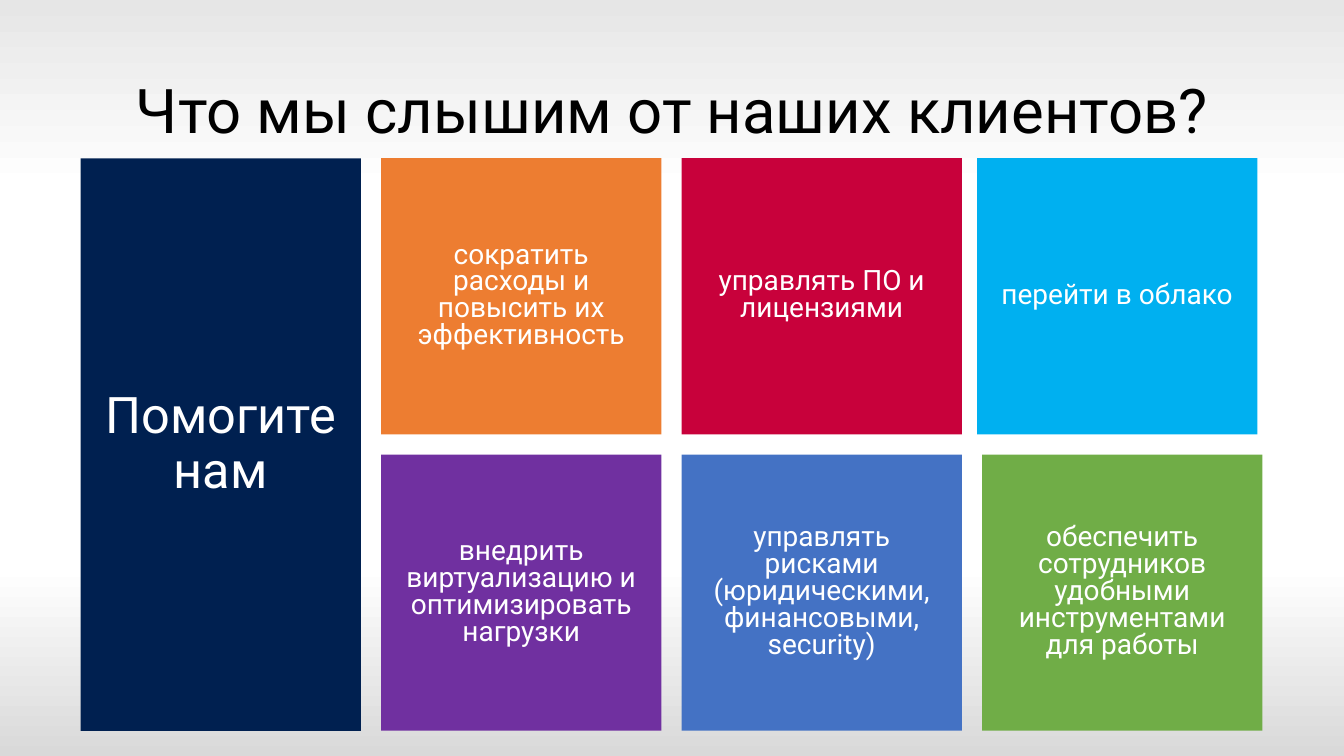
from copy import deepcopy
from dataclasses import dataclass

from pptx import Presentation
from pptx.dml.color import RGBColor
from pptx.enum.shapes import MSO_SHAPE as Shape
from pptx.enum.text import MSO_ANCHOR as Anchor, PP_ALIGN as Align
from pptx.oxml.ns import qn
from pptx.slide import Slide
from pptx.text.text import TextFrame
from pptx.util import Inches, Pt

FONT = "Roboto"
LEFT, TOP = 0.8, 1.57
TILE_WIDTH, TILE_HEIGHT, GAP = 2.78, 2.74, 0.2
BACKGROUND_STOPS = [(0, "E6E6E6"), (0.25, "FFFFFF"), (0.75, "FFFFFF"), (1, "D9D9D9")]


@dataclass(frozen=True)
class Tile:
    column: int
    row: int
    color: str
    text: str
    row_span: int = 1
    shift: float = 0
    size: int = 20
    line_spacing: float = 0.8
    side_inset: float = 0.2
    vertical_inset: float = 0.1
    space_after: float = 0


TILES = [
    Tile(0, 0, "002050", "Помогите нам", row_span=2, size=36, line_spacing=0.9,
         side_inset=0.1, vertical_inset=0.05, space_after=11.8),
    Tile(1, 0, "ED7D31", "сократить расходы и повысить их эффективность"),
    Tile(2, 0, "C8013B", "управлять ПО и лицензиями"),
    Tile(3, 0, "00B0F0", "перейти в облако", shift=-0.05),
    Tile(1, 1, "7030A0", "внедрить виртуализацию и оптимизировать нагрузки"),
    Tile(2, 1, "4472C4", "управлять рисками (юридическими, финансовыми, security)"),
    Tile(3, 1, "70AD47", "обеспечить сотрудников удобными инструментами для работы"),
]


def rgb(color: str) -> RGBColor:
    return RGBColor.from_string(color)


def write_text(frame: TextFrame, text: str, size: float, color: str,
               line_spacing: float, space_after: float = 0) -> None:
    frame.word_wrap = True
    frame.vertical_anchor = Anchor.MIDDLE
    paragraph = frame.paragraphs[0]
    paragraph.text = text
    paragraph.alignment = Align.CENTER
    paragraph.line_spacing = line_spacing
    paragraph.space_after = Pt(space_after)
    paragraph.font.name = FONT
    paragraph.font.size = Pt(size)
    paragraph.font.color.rgb = rgb(color)


def paint_background(slide: Slide) -> None:
    fill = slide.background.fill
    fill.gradient()
    fill.gradient_angle = 270
    # A new gradient has two stops; extend it to the number needed
    stop_list = next(slide.element.iter(qn("a:gsLst")))
    while len(stop_list) < len(BACKGROUND_STOPS):
        stop_list.append(deepcopy(stop_list[0]))
    for stop, (position, color) in zip(fill.gradient_stops, BACKGROUND_STOPS):
        stop.position = position
        stop.color.rgb = rgb(color)


def add_title(slide: Slide, text: str) -> None:
    box = slide.shapes.add_textbox(Inches(0.92), Inches(0.4), Inches(11.5), Inches(1.45))
    write_text(box.text_frame, text, 44, "000000", 0.9)


def add_tile(slide: Slide, tile: Tile) -> None:
    left = LEFT + tile.column * (TILE_WIDTH + GAP) + tile.shift
    top = TOP + tile.row * (TILE_HEIGHT + GAP)
    height = tile.row_span * (TILE_HEIGHT + GAP) - GAP
    shape = slide.shapes.add_shape(
        Shape.RECTANGLE, Inches(left), Inches(top), Inches(TILE_WIDTH), Inches(height))
    shape.shadow.inherit = False
    shape.fill.solid()
    shape.fill.fore_color.rgb = rgb(tile.color)
    shape.line.fill.background()
    frame = shape.text_frame
    frame.margin_left = frame.margin_right = Inches(tile.side_inset)
    frame.margin_top = frame.margin_bottom = Inches(tile.vertical_inset)
    write_text(frame, tile.text, tile.size, "FFFFFF", tile.line_spacing, tile.space_after)


def main() -> None:
    presentation = Presentation()
    presentation.slide_width = Inches(13.33)
    presentation.slide_height = Inches(7.5)
    slide = presentation.slides.add_slide(presentation.slide_layouts[6])

    # Background and title
    paint_background(slide)
    add_title(slide, "Что мы слышим от наших клиентов?")

    # Tiles with customer requests
    for tile in TILES:
        add_tile(slide, tile)

    presentation.save("out.pptx")


if __name__ == "__main__":
    main()
